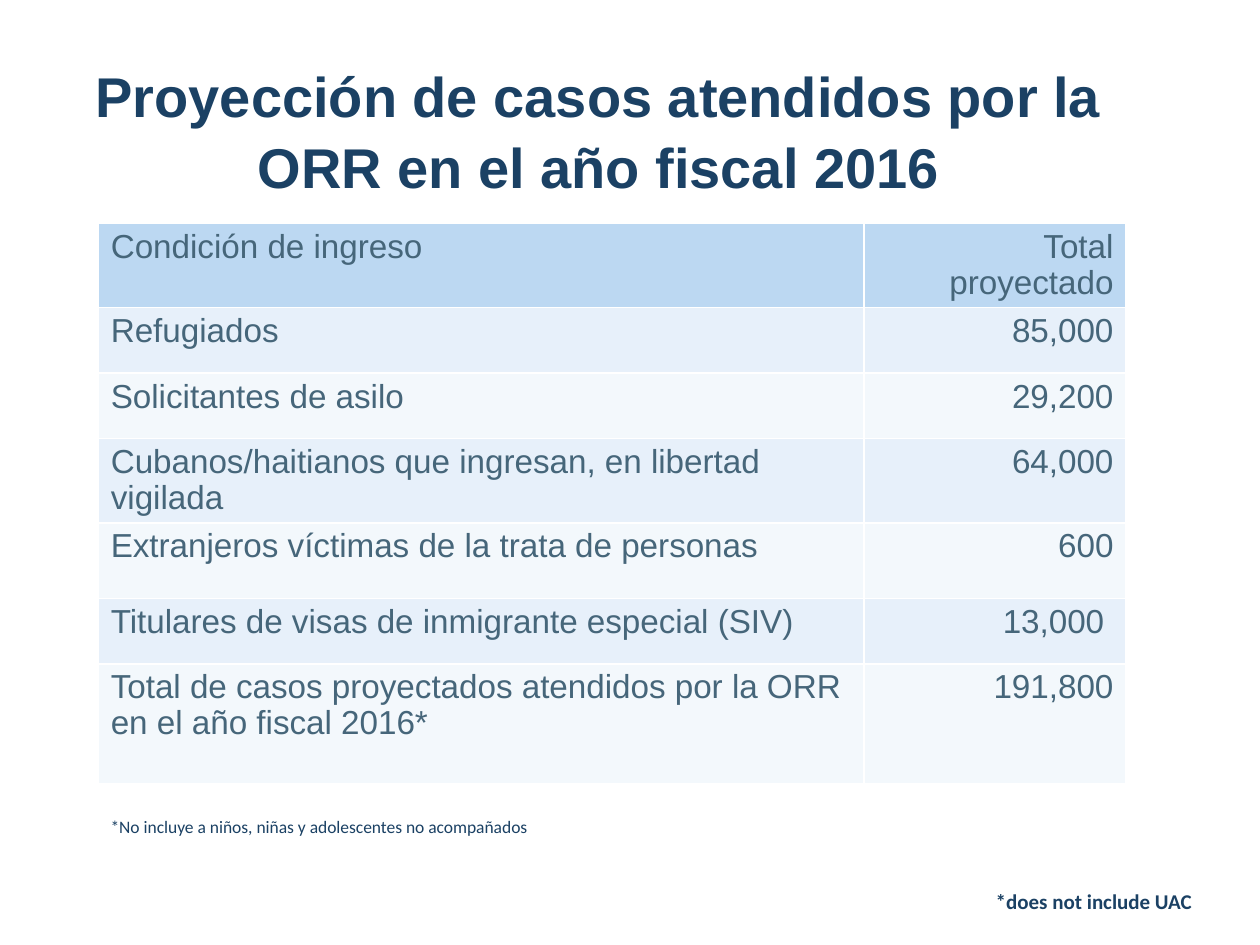
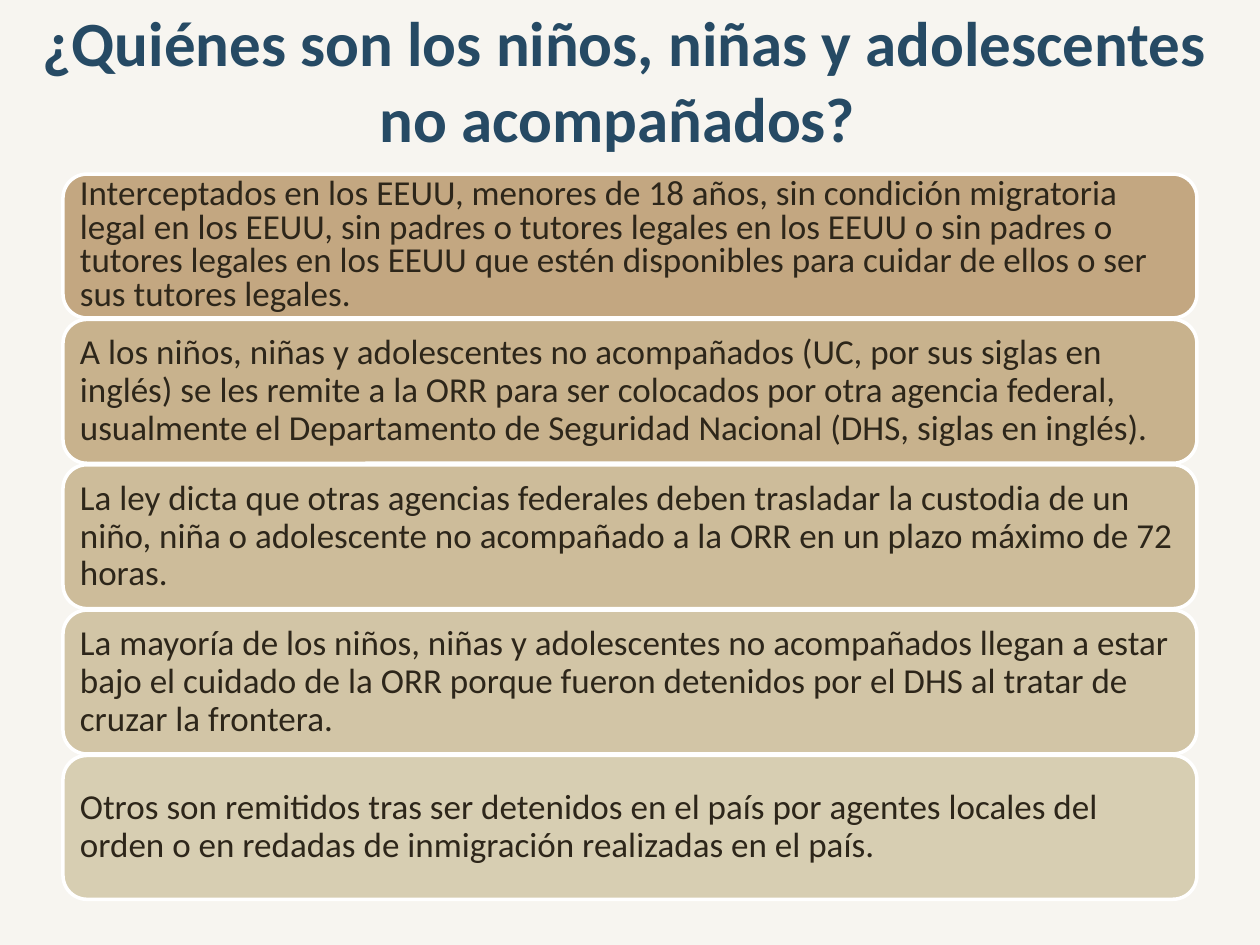
from dataclasses import dataclass

from lxml import etree
from pptx import Presentation
from pptx import util as u
from pptx.dml.color import RGBColor
from pptx.enum import shapes, text
from pptx.oxml import ns


@dataclass(frozen=True)
class Theme:
    """Colours, fonts and type sizes of the deck."""
    white: str = "FFFFFF"
    cream: str = "F7F5F0"
    navy: str = "1B4164"
    slate: str = "264A64"
    table_text: str = "46667A"
    card_text: str = "2D261A"
    header_fill: str = "BCD8F2"
    row_fills: tuple = ("E7F0FA", "F3F8FC")
    card_fills: tuple = ("C3A781", "C8B28D", "CDBC9A", "D2C5A6", "D7CEB2")
    sans: str = "Arial"
    humanist: str = "Calibri"
    table_size: float = 19
    card_size: float = 20
    note_size: float = 10
    footer_size: float = 12


THEME = Theme()

CASES = [
    ("Condición de ingreso", "Total proyectado"),
    ("Refugiados", "85,000"),
    ("Solicitantes de asilo", "29,200"),
    ("Cubanos/haitianos que ingresan, en libertad vigilada", "64,000"),
    ("Extranjeros víctimas de la trata de personas", "600"),
    ("Titulares de visas de inmigrante especial (SIV)", "13,000 "),
    ("Total de casos proyectados atendidos por la ORR en el año fiscal 2016*", "191,800"),
]
CASE_ROW_HEIGHTS = [1.09, 1.32, 1.32, 1.32, 1.52, 1.32, 2.41]
CASE_COLUMN_WIDTHS = [15.44, 5.28]

FACTS = [
    "Interceptados en los EEUU, menores de 18 años, sin condición migratoria legal en los EEUU, "
    "sin padres o tutores legales en los EEUU o sin padres o tutores legales en los EEUU que estén "
    "disponibles para cuidar de ellos o ser sus tutores legales.",
    "A los niños, niñas y adolescentes no acompañados (UC, por sus siglas en inglés) se les remite "
    "a la ORR para ser colocados por otra agencia federal, usualmente el Departamento de Seguridad "
    "Nacional (DHS, siglas en inglés).",
    "La ley dicta que otras agencias federales deben trasladar la custodia de un niño, niña o "
    "adolescente no acompañado a la ORR en un plazo máximo de 72 horas.",
    "La mayoría de los niños, niñas y adolescentes no acompañados llegan a estar bajo el cuidado de "
    "la ORR porque fueron detenidos por el DHS al tratar de cruzar la frontera.",
    "Otros son remitidos tras ser detenidos en el país por agentes locales del orden o en redadas "
    "de inmigración realizadas en el país.",
]


def lengths(box):
    """Turn a box in centimetres into lengths."""
    return [u.Cm(value) for value in box]


def paint(fill, color):
    """Give a fill one solid colour."""
    fill.solid()
    fill.fore_color.rgb = RGBColor.from_string(color)


def write(frame, words, font, size, color, bold=False, align=text.PP_ALIGN.LEFT, spacing=None):
    """Write one formatted run into the first paragraph of a frame."""
    frame.word_wrap = True
    paragraph = frame.paragraphs[0]
    paragraph.alignment = align
    if spacing:
        paragraph.line_spacing = spacing
    run = paragraph.add_run()
    run.text = words
    run.font.name = font
    run.font.size = u.Pt(size)
    run.font.bold = bold
    run.font.color.rgb = RGBColor.from_string(color)


def add_titled_slide(presentation, background, box, words, font, size, color, spacing=None):
    """Add a title-only slide with its background and centred bold title."""
    slide = presentation.slides.add_slide(presentation.slide_layouts[5])
    paint(slide.background.fill, background)
    title = slide.shapes.title
    title.left, title.top, title.width, title.height = lengths(box)
    title.text_frame.auto_size = text.MSO_AUTO_SIZE.NONE
    title.text_frame.vertical_anchor = text.MSO_ANCHOR.MIDDLE
    write(title.text_frame, words, font, size, color, True, text.PP_ALIGN.CENTER, spacing)
    return slide


def add_note(slide, box, words, size, bold=False, align=text.PP_ALIGN.LEFT):
    """Add a small navy note."""
    note = slide.shapes.add_textbox(*lengths(box))
    write(note.text_frame, words, THEME.humanist, size, THEME.navy, bold, align)


def set_borders(cell, color):
    """Draw thin lines on the four sides of a cell."""
    properties = cell._tc.get_or_add_tcPr()
    for position, side in enumerate(("lnL", "lnR", "lnT", "lnB")):
        line = etree.Element(ns.qn(f"a:{side}"), w=str(u.Pt(1)))
        solid = etree.SubElement(line, ns.qn("a:solidFill"))
        etree.SubElement(solid, ns.qn("a:srgbClr"), val=color)
        properties.insert(position, line)


def add_case_table(slide, left, top):
    """Add the table of projected cases with banded rows."""
    box = (left, top, sum(CASE_COLUMN_WIDTHS), sum(CASE_ROW_HEIGHTS))
    table = slide.shapes.add_table(len(CASES), len(CASE_COLUMN_WIDTHS), *lengths(box)).table
    for column, width in zip(table.columns, CASE_COLUMN_WIDTHS):
        column.width = u.Cm(width)
    for index, (row, values, height) in enumerate(zip(table.rows, CASES, CASE_ROW_HEIGHTS)):
        row.height = u.Cm(height)
        fill = THEME.row_fills[(index - 1) % 2] if index else THEME.header_fill
        for cell, value, align in zip(row.cells, values, (text.PP_ALIGN.LEFT, text.PP_ALIGN.RIGHT)):
            paint(cell.fill, fill)
            set_borders(cell, THEME.white)
            write(cell.text_frame, value, THEME.sans, THEME.table_size, THEME.table_text,
                  align=align, spacing=0.97)


def add_fact_cards(slide, left, top, width, height, pitch):
    """Stack one rounded card per fact."""
    for index, (fact, fill) in enumerate(zip(FACTS, THEME.card_fills)):
        box = (left, top + index * pitch, width, height)
        card = slide.shapes.add_shape(shapes.MSO_SHAPE.ROUNDED_RECTANGLE, *lengths(box))
        card.shadow.inherit = False
        paint(card.fill, fill)
        paint(card.line.fill, THEME.white)
        card.line.width = u.Pt(2)
        frame = card.text_frame
        frame.vertical_anchor = text.MSO_ANCHOR.MIDDLE
        frame.margin_left = frame.margin_right = u.Cm(0.2)
        frame.margin_top = frame.margin_bottom = u.Cm(0.2)
        write(frame, fact, THEME.humanist, THEME.card_size, THEME.card_text,
              spacing=0.9 if index else 0.8)


def build_cases_slide(presentation):
    """Build the slide of projected cases."""
    slide = add_titled_slide(presentation, THEME.white, (0.64, 0.99, 22.86, 3.2),
                             "Proyección de casos atendidos por la ORR en el año fiscal 2016",
                             THEME.sans, 32, THEME.navy, 1.06)
    add_case_table(slide, 1.98, 4.5)
    add_note(slide, (15.19, 17.78, 9.09, 0.76), "*does not include UAC",
             THEME.footer_size, True, text.PP_ALIGN.RIGHT)
    add_note(slide, (1.98, 16.33, 15.39, 0.69),
             "*No incluye a niños, niñas y adolescentes no acompañados", THEME.note_size)


def build_facts_slide(presentation):
    """Build the slide that defines unaccompanied children."""
    slide = add_titled_slide(presentation, THEME.cream, (0.43, 0.61, 24.33, 1.98),
                             "¿Quiénes son los niños, niñas y adolescentes no acompañados? ",
                             THEME.humanist, 36, THEME.slate)
    add_fact_cards(slide, 1.27, 3.51, 22.86, 2.9, 2.93)


def main():
    """Build and save the presentation."""
    presentation = Presentation()
    presentation.slide_width, presentation.slide_height = u.Cm(25.4), u.Cm(19.05)
    build_cases_slide(presentation)
    build_facts_slide(presentation)
    presentation.save("out.pptx")


if __name__ == "__main__":
    main()
